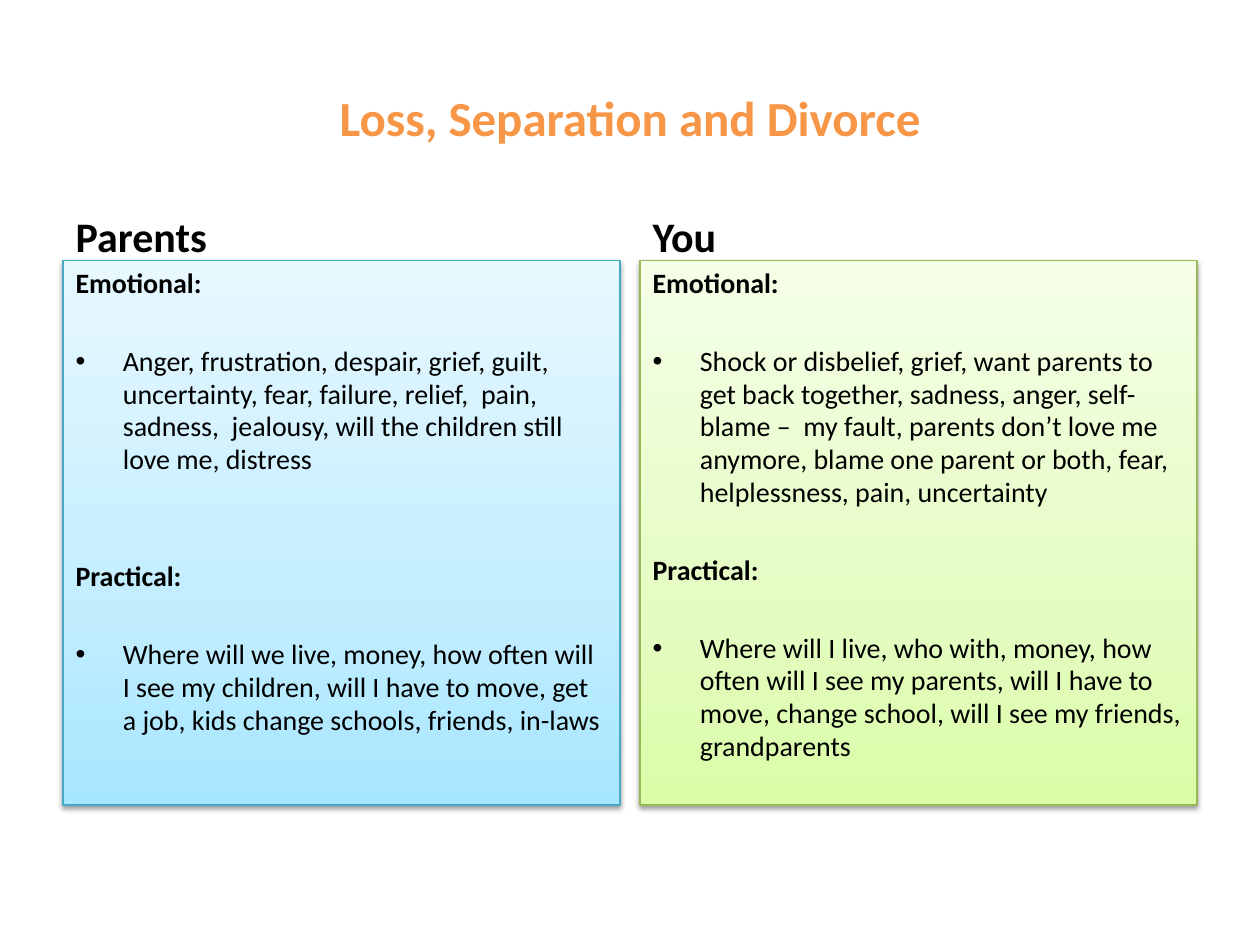
import pptx
import pptx.dml.color
import pptx.enum.text
import pptx.oxml
import pptx.oxml.ns
import pptx.util

WIDTH, HEIGHT = pptx.util.Inches(10), pptx.util.Inches(7.5)
MARGIN, COLUMN_WIDTH = 0.05, 0.442
NAMESPACE = pptx.oxml.ns.nsdecls("a")
LINE_PITCH, SPACE = 19.2, 3.2

PARENTS = [
    ("Emotional:", False, 0),
    ("Anger, frustration, despair, grief, guilt, uncertainty, fear, failure, relief,  pain, "
     "sadness,  jealousy, will the children still love me, distress", True, 1),
    ("Practical:", False, 2),
    ("Where will we live, money, how often will I see my children, will I have to move, "
     "get a job, kids change schools, friends, in-laws", True, 1),
]
YOU = [
    ("Emotional:", False, 0),
    ("Shock or disbelief, grief, want parents to get back together, sadness, anger, self-blame –  "
     "my fault, parents don’t love me anymore, blame one parent or both, fear, helplessness, "
     "pain, uncertainty", True, 1),
    ("Practical:", False, 1),
    ("Where will I live, who with, money, how often will I see my parents, will I have to move, "
     "change school, will I see my friends, grandparents", True, 1),
]
BLUE = ("46AAC5", ["A7E6FF", "C1EDFF", "E7F8FF"])
GREEN = ("98B955", ["DAFDA7", "E4FCC2", "F5FFE7"])


def color(value):
    """Turn a hex string into a colour."""
    return pptx.dml.color.RGBColor.from_string(value)


def place(shape, left, top, width, height):
    """Position a shape by shares of the slide's size."""
    shape.left, shape.top = round(left * WIDTH), round(top * HEIGHT)
    shape.width, shape.height = round(width * WIDTH), round(height * HEIGHT)
    shape.text_frame.auto_size = pptx.enum.text.MSO_AUTO_SIZE.NONE
    shape.text_frame.word_wrap = True


def style(paragraph, size, bold, value="000000"):
    """Set the font of a paragraph."""
    font = paragraph.font
    font.name, font.size, font.bold = "Calibri", pptx.util.Pt(size), bold
    font.color.rgb = color(value)


def set_bullet(paragraph, bulleted):
    """Give a paragraph a hanging bullet, or none."""
    properties = paragraph._p.get_or_add_pPr()
    indent = pptx.util.Inches(0.375) if bulleted else 0
    properties.set("marL", str(indent))
    properties.set("indent", str(-indent))
    bullet = 'a:buChar char="•"' if bulleted else "a:buNone"
    properties.append(pptx.oxml.parse_xml(f"<{bullet.replace(' ', f' {NAMESPACE} ', 1)}/>"
                                          if bulleted else f"<{bullet} {NAMESPACE}/>"))


def paint_panel(shape, line_color, stops):
    """Give a panel its upward gradient, outline and soft shadow."""
    shape.fill.gradient()
    shape.fill.gradient_angle = 90
    properties = shape._element.spPr
    stop_list = properties.find(".//" + pptx.oxml.ns.qn("a:gsLst"))
    stop_list.clear()
    for position, value in zip((0, 35, 100), stops):
        stop_list.append(pptx.oxml.parse_xml(
            f'<a:gs {NAMESPACE} pos="{position * 1000}"><a:srgbClr val="{value}"/></a:gs>'))
    shape.line.color.rgb = color(line_color)
    shape.line.width = pptx.util.Pt(0.75)
    properties.append(pptx.oxml.parse_xml(
        f'<a:effectLst {NAMESPACE}><a:outerShdw blurRad="40000" dist="20000" dir="5400000" '
        'rotWithShape="0"><a:srgbClr val="000000"><a:alpha val="38000"/></a:srgbClr>'
        '</a:outerShdw></a:effectLst>'))


def add_title(shape, text):
    """Fill the title placeholder."""
    place(shape, MARGIN, 0.04, 1 - 2 * MARGIN, 1 / 6)
    shape.text_frame.text = text
    shape.text_frame.vertical_anchor = pptx.enum.text.MSO_ANCHOR.MIDDLE
    paragraph = shape.text_frame.paragraphs[0]
    paragraph.alignment = pptx.enum.text.PP_ALIGN.CENTER
    style(paragraph, 28, True, "F79646")


def add_column(heading, panel, left, text, items, palette):
    """Fill one column: a heading above a painted panel of items."""
    place(heading, left, 0.19, COLUMN_WIDTH, 0.093)
    heading.text_frame.text = text
    heading.text_frame.vertical_anchor = pptx.enum.text.MSO_ANCHOR.BOTTOM
    style(heading.text_frame.paragraphs[0], 24, True)

    place(panel, left, 0.276, COLUMN_WIDTH, 0.576)
    paint_panel(panel, *palette)
    frame = panel.text_frame
    frame.text = "\n".join(item for item, _, _ in items)
    for paragraph, (_, bulleted, gap) in zip(frame.paragraphs, items):
        paragraph.line_spacing = 0.98
        paragraph.space_before = pptx.util.Pt(round(SPACE + gap * (LINE_PITCH + SPACE), 1))
        set_bullet(paragraph, bulleted)
        style(paragraph, 16, not bulleted)


def main():
    """Build the comparison slide."""
    presentation = pptx.Presentation()
    presentation.slide_width, presentation.slide_height = WIDTH, HEIGHT
    slide = presentation.slides.add_slide(presentation.slide_layouts.get_by_name("Comparison"))
    title, *columns = slide.placeholders
    add_title(title, "Loss, Separation and Divorce")
    add_column(*columns[:2], MARGIN, "Parents", PARENTS, BLUE)
    add_column(*columns[2:], 1 - MARGIN - COLUMN_WIDTH, "You", YOU, GREEN)
    presentation.save("out.pptx")


if __name__ == "__main__":
    main()
